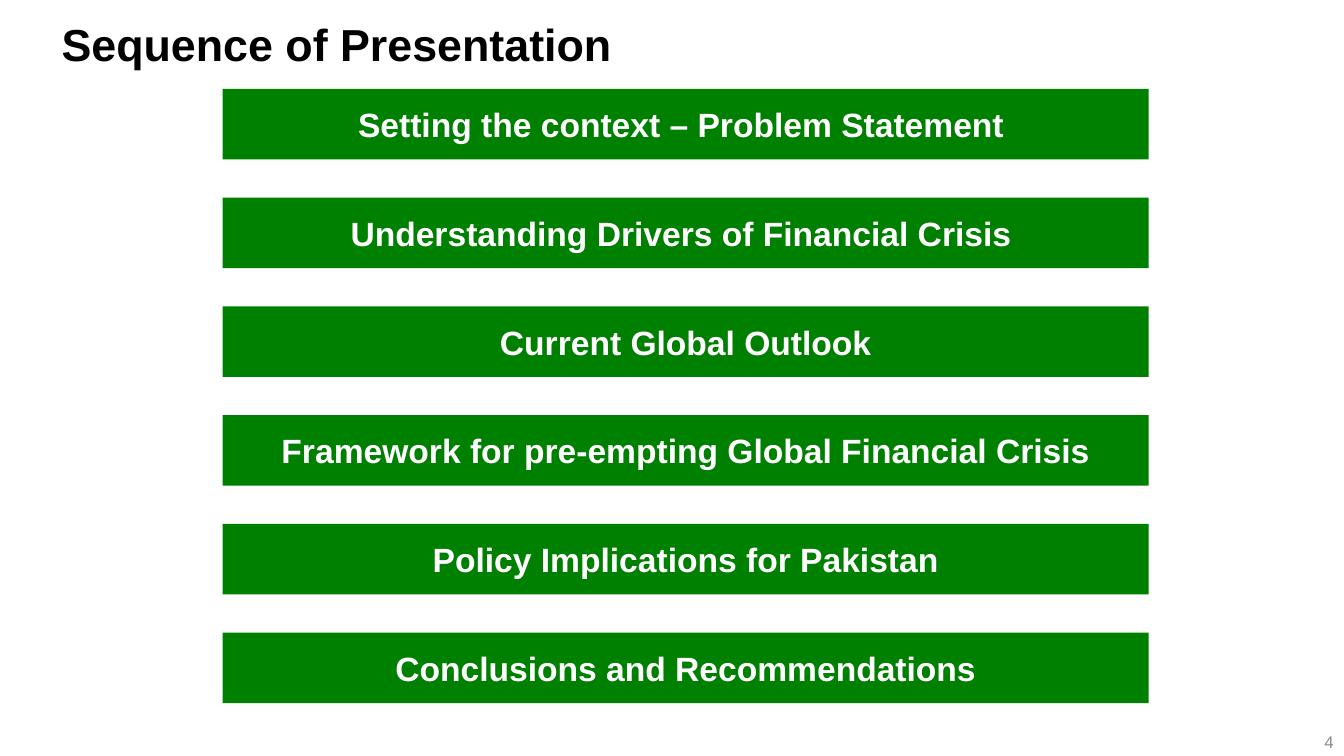
from pptx import Presentation
from pptx.dml.color import RGBColor
from pptx.enum.shapes import MSO_SHAPE
from pptx.enum.text import MSO_ANCHOR, MSO_AUTO_SIZE, PP_ALIGN
from pptx.util import Cm, Pt

BLACK = RGBColor(0x00, 0x00, 0x00)
WHITE = RGBColor(0xFF, 0xFF, 0xFF)
GREEN = RGBColor(0x00, 0x80, 0x00)
GREY = RGBColor(0x8C, 0x8C, 0x8C)

RECTANGLE = MSO_SHAPE.RECTANGLE
MIDDLE, BOTTOM = MSO_ANCHOR.MIDDLE, MSO_ANCHOR.BOTTOM
LEFT, CENTER, RIGHT = PP_ALIGN.LEFT, PP_ALIGN.CENTER, PP_ALIGN.RIGHT
NO_AUTOFIT = MSO_AUTO_SIZE.NONE

# The trailing spaces shift the first two topics slightly left of centre.
TOPICS = [
    "Setting the context – Problem Statement ",
    "Understanding Drivers of Financial Crisis ",
    "Current Global Outlook",
    "Framework for pre-empting Global Financial Crisis",
    "Policy Implications for Pakistan",
    "Conclusions and Recommendations",
]
BAR_LEFT, BAR_TOP = 5.61, 2.24
BAR_WIDTH, BAR_HEIGHT = 23.34, 1.78
BAR_PITCH = 2.74


def write_line(frame, text, size, color, bold, align, anchor):
    frame.word_wrap = True
    frame.auto_size = NO_AUTOFIT
    frame.vertical_anchor = anchor
    paragraph = frame.paragraphs[0]
    paragraph.alignment = align
    run = paragraph.add_run()
    run.text = text
    run.font.name = "Arial"
    run.font.size = Pt(size)
    run.font.bold = bold
    run.font.color.rgb = color


prs = Presentation()
prs.slide_width = Cm(33.87)
prs.slide_height = Cm(19.05)
slide = prs.slides.add_slide(prs.slide_layouts[5])

heading = slide.shapes.title
heading.left, heading.top = Cm(1.55), Cm(0.76)
heading.width, heading.height = Cm(24.43), Cm(1.02)
heading_frame = heading.text_frame
heading_frame.margin_left = heading_frame.margin_right = 0
heading_frame.margin_top = heading_frame.margin_bottom = 0
write_line(heading_frame, "Sequence of Presentation", 32, BLACK, True, LEFT, BOTTOM)

for position, topic in enumerate(TOPICS):
    bar = slide.shapes.add_shape(
        RECTANGLE, Cm(BAR_LEFT), Cm(BAR_TOP + position * BAR_PITCH),
        Cm(BAR_WIDTH), Cm(BAR_HEIGHT))
    bar.shadow.inherit = False
    bar.fill.solid()
    bar.fill.fore_color.rgb = GREEN
    bar.line.fill.background()
    write_line(bar.text_frame, topic, 24, WHITE, True, CENTER, MIDDLE)

page_number = slide.shapes.add_textbox(Cm(26.24), Cm(18.19), Cm(7.62), Cm(1.02))
write_line(page_number.text_frame, "4", 12, GREY, False, RIGHT, MIDDLE)

prs.save("out.pptx")
